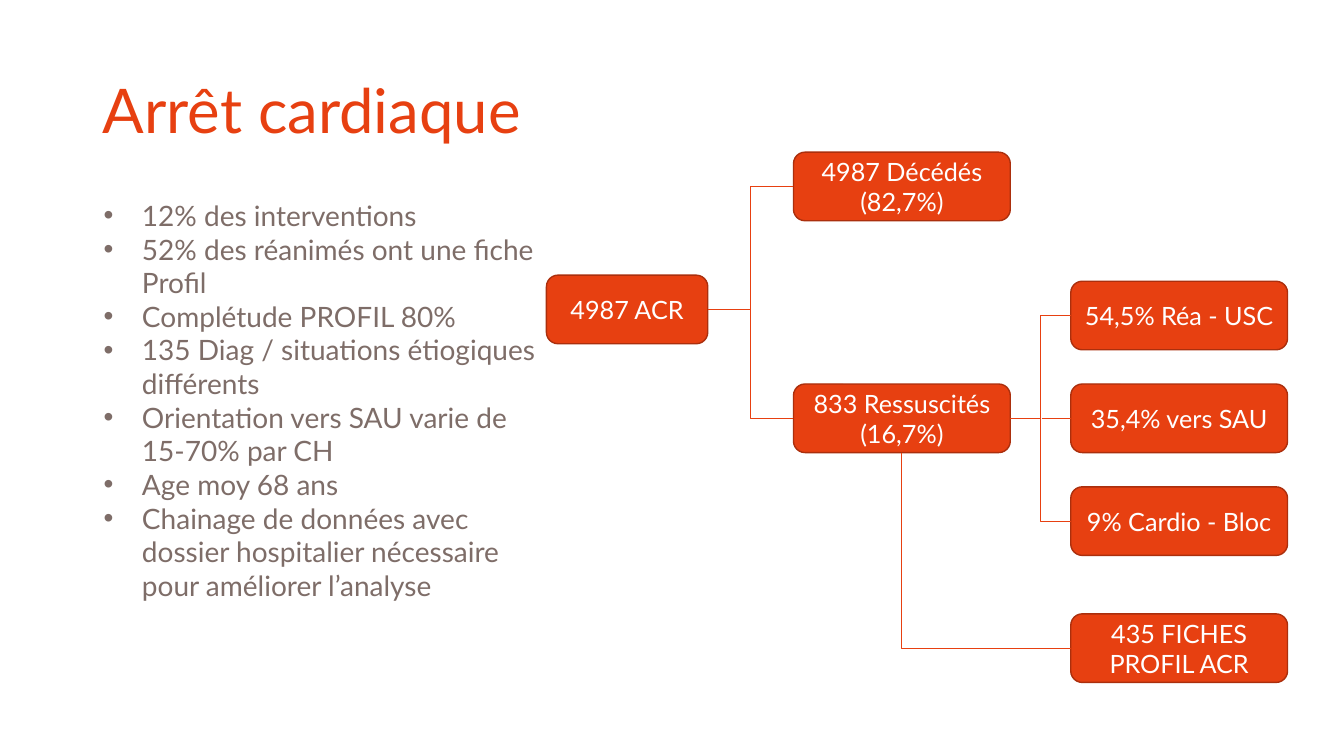
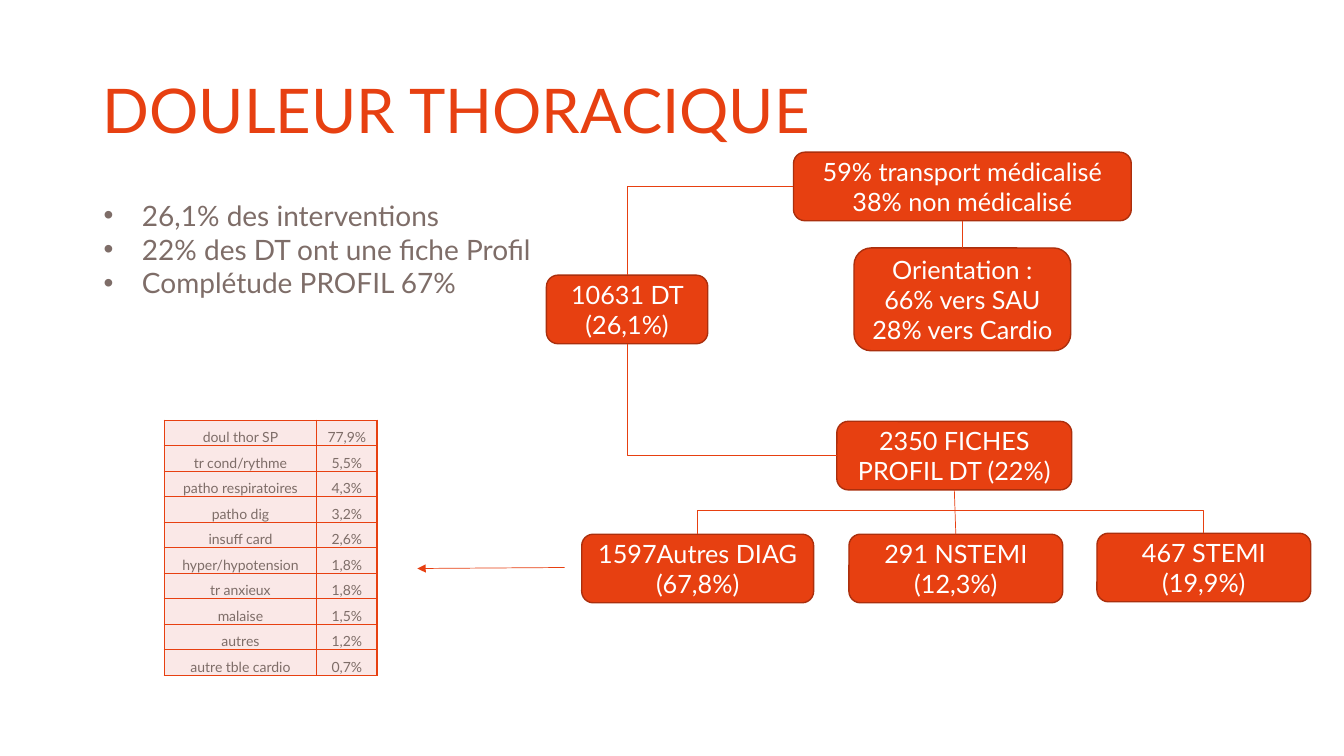
from lxml.etree import SubElement
from pptx import Presentation
from pptx.dml.color import RGBColor
from pptx.enum.shapes import MSO_CONNECTOR as Wire, MSO_SHAPE as Form
from pptx.enum.text import MSO_ANCHOR as Anchor, MSO_AUTO_SIZE as Fit, PP_ALIGN as Align
from pptx.oxml.ns import qn
from pptx.util import Pt

SCALE = 9144
FONT = "Lato"
ORANGE = RGBColor(0xE7, 0x40, 0x11)
RUST = RGBColor(0xAB, 0x2F, 0x0D)
GREY = RGBColor(0x7E, 0x6D, 0x68)
PINK = RGBColor(0xFA, 0xE8, 0xE7)
WHITE = RGBColor(0xFF, 0xFF, 0xFF)
TOP, LEFT, BOTTOM, RIGHT = range(4)
TALL = 68

DIAGS = [
    ("doul thor SP", "77,9%"),
    ("tr cond/rythme", "5,5%"),
    ("patho respiratoires", "4,3%"),
    ("patho dig", "3,2%"),
    ("insuff card", "2,6%"),
    ("hyper/hypotension", "1,8%"),
    ("tr anxieux", "1,8%"),
    ("malaise", "1,5%"),
    ("autres", "1,2%"),
    ("autre tble cardio", "0,7%"),
]


def px(*vals):
    """Turn px lengths into a list of EMU."""
    return [val * SCALE for val in vals]


def style(frame, size, color, align):
    """Format every paragraph and run of a text frame."""
    for para in frame.paragraphs:
        para.alignment = align
        for run in para.runs:
            run.font.size = Pt(size)
            run.font.name = FONT
            run.font.color.rgb = color


def start(deck, title):
    """Add a slide with its title and return it."""
    slide = deck.slides.add_slide(deck.slide_layouts[5])
    head = slide.shapes.title
    head.left, head.top, head.width, head.height = px(92, 40, 1150, 145)
    frame = head.text_frame
    frame.text = title
    frame.auto_size = Fit.NONE
    frame.vertical_anchor = Anchor.MIDDLE
    frame.paragraphs[0].line_spacing = 0.9
    style(frame, 44, ORANGE, Align.LEFT)
    return slide


def points(slide, box, items):
    """Write a bulleted list in the box."""
    area = slide.shapes.add_textbox(*px(*box))
    frame = area.text_frame
    frame.word_wrap = True
    frame.text = "\n".join(items)
    style(frame, 20, GREY, Align.LEFT)
    indent, = px(38)
    for para in frame.paragraphs:
        props = para._p.get_or_add_pPr()
        props.set("marL", str(indent))
        props.set("indent", str(-indent))
        SubElement(props, qn("a:buFont")).set("typeface", "Arial")
        SubElement(props, qn("a:buChar")).set("char", "•")


def node(slide, text, x, y, wide=215, tall=TALL):
    """Draw one rounded box of the tree."""
    shape = slide.shapes.add_shape(Form.ROUNDED_RECTANGLE, *px(x, y, wide, tall))
    shape.shadow.inherit = False
    shape.fill.solid()
    shape.fill.fore_color.rgb = ORANGE
    shape.line.color.rgb = RUST
    shape.line.width = Pt(1)
    frame = shape.text_frame
    frame.text = text
    frame.word_wrap = True
    frame.vertical_anchor = Anchor.MIDDLE
    style(frame, 18, WHITE, Align.CENTER)
    return shape


def link(slide, start, end, kind=Wire.STRAIGHT, corner=False, arrow=False):
    """Join two ends, each a point or a node with its side."""
    wire = slide.shapes.add_connector(kind, 0, 0, 0, 0)
    if isinstance(start[0], int):
        wire.begin_x, wire.begin_y = px(*start)
    else:
        wire.begin_connect(*start)
    if isinstance(end[0], int):
        wire.end_x, wire.end_y = px(*end)
    else:
        wire.end_connect(*end)
    wire.line.color.rgb = ORANGE
    wire.line.width = Pt(0.5)
    props = wire._element.spPr
    if corner:
        props.find(qn("a:prstGeom")).set("prst", "bentConnector2")
    if arrow:
        SubElement(wire.line._get_or_add_ln(), qn("a:tailEnd")).set("type", "triangle")
    SubElement(props, qn("a:effectLst"))


def bend(slide, start, end, corner=False):
    """Join two ends with an elbow that leaves sideways."""
    link(slide, start, end, Wire.ELBOW, corner)


def edge(cell):
    """Draw the four borders of a cell."""
    props = cell._tc.get_or_add_tcPr()
    for spot, side in enumerate(("lnL", "lnR", "lnT", "lnB")):
        line = SubElement(props, qn("a:" + side))
        line.set("w", str(Pt(1)))
        fill = SubElement(line, qn("a:solidFill"))
        SubElement(fill, qn("a:srgbClr")).set("val", str(ORANGE))
        props.remove(line)
        props.insert(spot, line)


def grid(slide, box, cols, rows):
    """Fill a bordered table in the box."""
    table = slide.shapes.add_table(len(rows), len(cols), *px(*box)).table
    table.first_row = table.horz_banding = False
    for col, wide in zip(table.columns, px(*cols)):
        col.width = wide
    for row, texts in zip(table.rows, rows):
        row.height = box[3] * SCALE // len(rows)
        for cell, text in zip(row.cells, texts):
            cell.text = text
            cell.margin_left, cell.margin_right, cell.margin_top, cell.margin_bottom = px(1, 1, 1, 0)
            cell.vertical_anchor = Anchor.BOTTOM
            cell.fill.solid()
            cell.fill.fore_color.rgb = PINK
            style(cell.text_frame, 10, GREY, Align.CENTER)
            edge(cell)


def arrest(deck):
    """Build the cardiac arrest slide."""
    slide = start(deck, "Arrêt cardiaque")
    root = node(slide, "4987 ACR", 542, 273, 160)
    dead = node(slide, "4987 Décédés (82,7%)", 787, 151)
    alive = node(slide, "833 Ressuscités (16,7%)", 787, 381)
    units = ["54,5% Réa - USC", "35,4% vers SAU", "9% Cardio - Bloc"]
    icu, ward, lab = [node(slide, text, 1062, 279 + 102 * i) for i, text in enumerate(units)]
    forms = node(slide, "435 FICHES PROFIL ACR", 1062, 609)
    for child in (dead, alive):
        bend(slide, (child, LEFT), (root, RIGHT))
    for child in (icu, lab):
        bend(slide, (alive, RIGHT), (child, LEFT))
    link(slide, (1033, 415), (ward, LEFT))
    bend(slide, (forms, LEFT), (alive, BOTTOM), True)
    points(slide, (93, 192, 450, 475), [
        "12% des interventions",
        "52% des réanimés ont une fiche Profil",
        "Complétude PROFIL 80%",
        "135 Diag / situations étiogiques différents",
        "Orientation vers SAU varie de 15-70% par CH",
        "Age moy 68 ans",
        "Chainage de données avec dossier hospitalier nécessaire pour améliorer l’analyse",
    ])


def chest(deck):
    """Build the chest pain slide."""
    slide = start(deck, "DOULEUR THORACIQUE")
    root = node(slide, "10631 DT (26,1%)", 542, 273, 160)
    ride = node(slide, "59% transport médicalisé\n38% non médicalisé", 787, 151, 335)
    goal = node(slide, "Orientation :\n66% vers SAU\n28% vers Cardio", 847, 246, 215, 102)
    forms = node(slide, "2350 FICHES PROFIL DT (22%)", 830, 418, 233)
    other = node(slide, "1597Autres DIAG (67,8%)", 577, 530, 230)
    minor = node(slide, "291 NSTEMI (12,3%)", 842, 530, 212)
    major = node(slide, "467 STEMI (19,9%)", 1088, 529, 212)
    bend(slide, (ride, LEFT), (root, TOP), True)
    bend(slide, (forms, LEFT), (root, BOTTOM), True)
    link(slide, (goal, TOP), (ride, BOTTOM))
    link(slide, (forms, BOTTOM), (minor, TOP))
    for child in (other, major):
        bend(slide, (946, 506), (child, TOP), True)
    link(slide, (560, 563), (414, 564), arrow=True)
    points(slide, (93, 192, 450, 175), [
        "26,1% des interventions",
        "22% des DT ont une fiche Profil",
        "Complétude PROFIL 67%",
    ])
    grid(slide, (163, 417, 211, 253), (151, 60), DIAGS)


def main():
    """Build and save the deck."""
    deck = Presentation()
    deck.slide_width, deck.slide_height = px(1333, 750)
    arrest(deck)
    chest(deck)
    deck.save("out.pptx")


if __name__ == "__main__":
    main()
